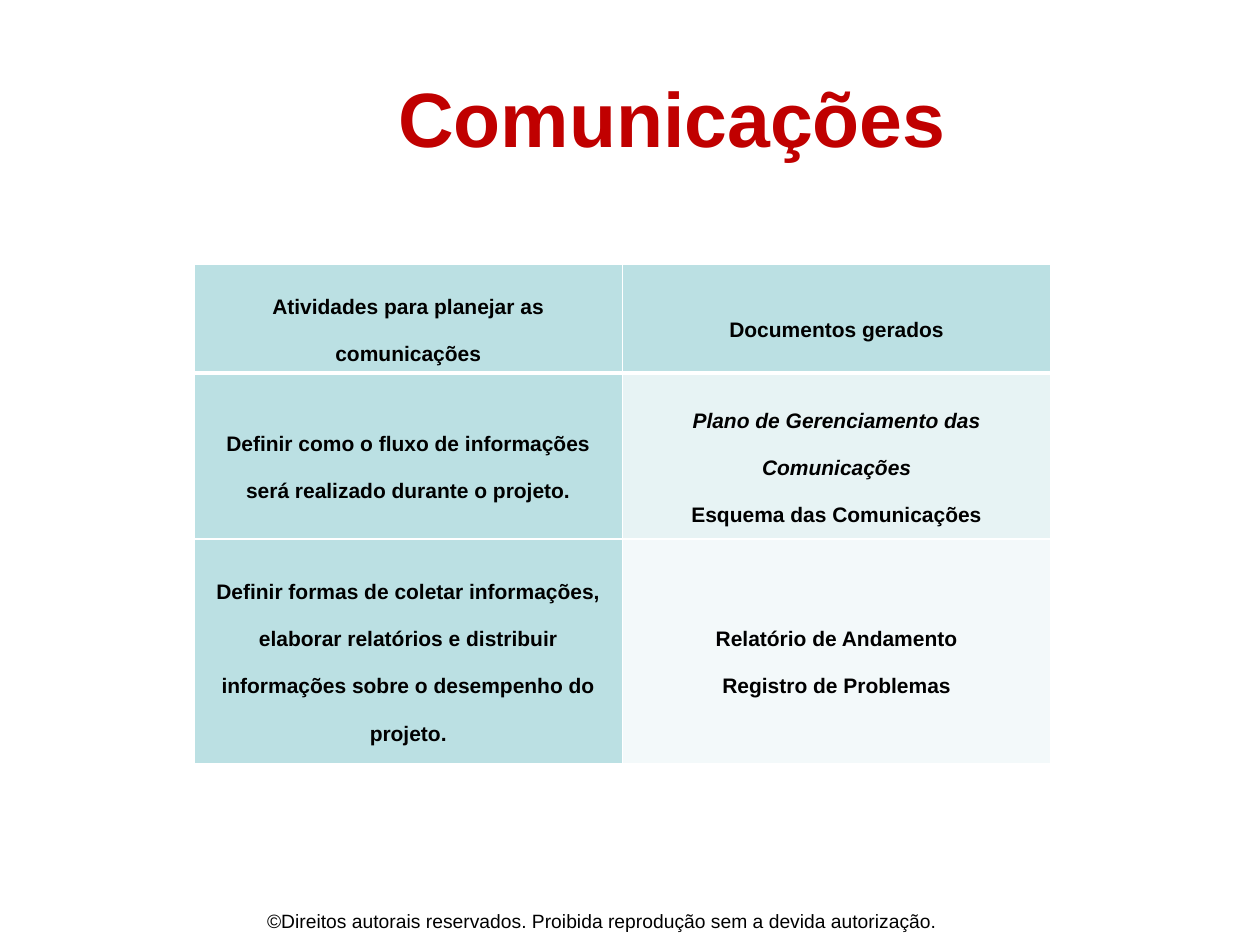
from lxml import etree
from pptx import Presentation
from pptx.dml.color import RGBColor
from pptx.enum.text import MSO_ANCHOR, PP_ALIGN
from pptx.oxml.ns import qn
from pptx.util import Inches, Pt

CENTER = PP_ALIGN.CENTER
TOP, MIDDLE = MSO_ANCHOR.TOP, MSO_ANCHOR.MIDDLE

RED = RGBColor(0xC0, 0x00, 0x00)
BLACK = RGBColor(0x00, 0x00, 0x00)
WHITE = RGBColor(0xFF, 0xFF, 0xFF)
TEAL = RGBColor(0xBB, 0xE0, 0xE3)
PALE_TEAL = RGBColor(0xE7, 0xF3, 0xF4)
PALEST_TEAL = RGBColor(0xF3, 0xF9, 0xFA)

FONT_NAME = "Arial"
TITLE_FORMAT = {"size": Pt(44), "bold": True, "color": RED}
CELL_FORMAT = {"size": Pt(12), "bold": True, "color": BLACK}
ITALIC_FORMAT = {**CELL_FORMAT, "italic": True}
FOOTER_FORMAT = {"size": Pt(11), "color": BLACK}

COLUMN_WIDTHS = [3.4, 3.4]
ROW_HEIGHTS = [0.86, 1.32, 1.78]
# Each cell holds its fill and its paragraphs as (text, format)
ROWS = [
    [
        (TEAL, [("Atividades para planejar as comunicações", CELL_FORMAT)]),
        (TEAL, [("Documentos gerados", CELL_FORMAT)]),
    ],
    [
        (TEAL, [("Definir como o fluxo de informações será realizado "
                 "durante o projeto.", CELL_FORMAT)]),
        (PALE_TEAL, [("Plano de Gerenciamento das Comunicações", ITALIC_FORMAT),
                     ("Esquema das Comunicações", CELL_FORMAT)]),
    ],
    [
        (TEAL, [("Definir formas de coletar informações, elaborar relatórios e "
                 "distribuir informações sobre o desempenho do projeto.",
                 CELL_FORMAT)]),
        (PALEST_TEAL, [("Relatório de Andamento", CELL_FORMAT),
                       ("Registro de Problemas", CELL_FORMAT)]),
    ],
]


def write_paragraph(paragraph, text, text_format, line_spacing=1.0):
    paragraph.alignment = CENTER
    paragraph.line_spacing = line_spacing
    run = paragraph.add_run()
    run.text = text
    run.font.name = FONT_NAME
    for name, value in text_format.items():
        if name == "color":
            run.font.color.rgb = value
        else:
            setattr(run.font, name, value)


def add_text(slide, box, text, text_format, anchor, margin_top=0.05):
    shape = slide.shapes.add_textbox(*map(Inches, box))
    frame = shape.text_frame
    frame.word_wrap = True
    frame.vertical_anchor = anchor
    frame.margin_top = Inches(margin_top)
    write_paragraph(frame.paragraphs[0], text, text_format)


def set_borders(cell, widths):
    properties = cell._tc.get_or_add_tcPr()
    for index, (side, width) in enumerate(widths.items()):
        line = etree.Element(qn(f"a:ln{side}"), w=str(Pt(width)))
        fill = etree.SubElement(line, qn("a:solidFill"))
        etree.SubElement(fill, qn("a:srgbClr"), val=str(WHITE))
        properties.insert(index, line)


def fill_cell(cell, color, paragraphs, border_widths):
    cell.vertical_anchor = MIDDLE
    cell.margin_left = cell.margin_right = Inches(0.07)
    cell.margin_top = cell.margin_bottom = 0
    set_borders(cell, border_widths)
    cell.fill.solid()
    cell.fill.fore_color.rgb = color
    frame = cell.text_frame
    for index, (text, text_format) in enumerate(paragraphs):
        paragraph = frame.add_paragraph() if index else frame.paragraphs[0]
        write_paragraph(paragraph, text, text_format, line_spacing=2.0)


def add_activity_table(slide, left, top):
    size = (sum(COLUMN_WIDTHS), sum(ROW_HEIGHTS))
    table = slide.shapes.add_table(
        len(ROWS), len(COLUMN_WIDTHS), *map(Inches, (left, top, *size))
    ).table
    for column, width in zip(table.columns, COLUMN_WIDTHS):
        column.width = Inches(width)
    for row_index, (height, row) in enumerate(zip(ROW_HEIGHTS, ROWS)):
        table.rows[row_index].height = Inches(height)
        # A thick line parts the header from the body
        borders = {"L": 1, "R": 1,
                   "T": 3 if row_index == 1 else 1,
                   "B": 3 if row_index == 0 else 1}
        for column_index, (color, paragraphs) in enumerate(row):
            fill_cell(table.cell(row_index, column_index), color, paragraphs, borders)


def main():
    presentation = Presentation()
    presentation.slide_width = Inches(10)
    presentation.slide_height = Inches(7.5)
    slide = presentation.slides.add_slide(presentation.slide_layouts[6])

    # Title
    add_text(slide, (1.17, 0.3, 8.33, 1.25), "Comunicações", TITLE_FORMAT, MIDDLE)
    # Activities and the documents they produce
    add_activity_table(slide, 1.54, 2.1)
    # Copyright line
    add_text(slide, (0.98, 6.98, 7.6, 0.52),
             "©Direitos autorais reservados. Proibida reprodução sem a devida autorização.",
             FOOTER_FORMAT, TOP, margin_top=0.24)

    presentation.save("out.pptx")


if __name__ == "__main__":
    main()
